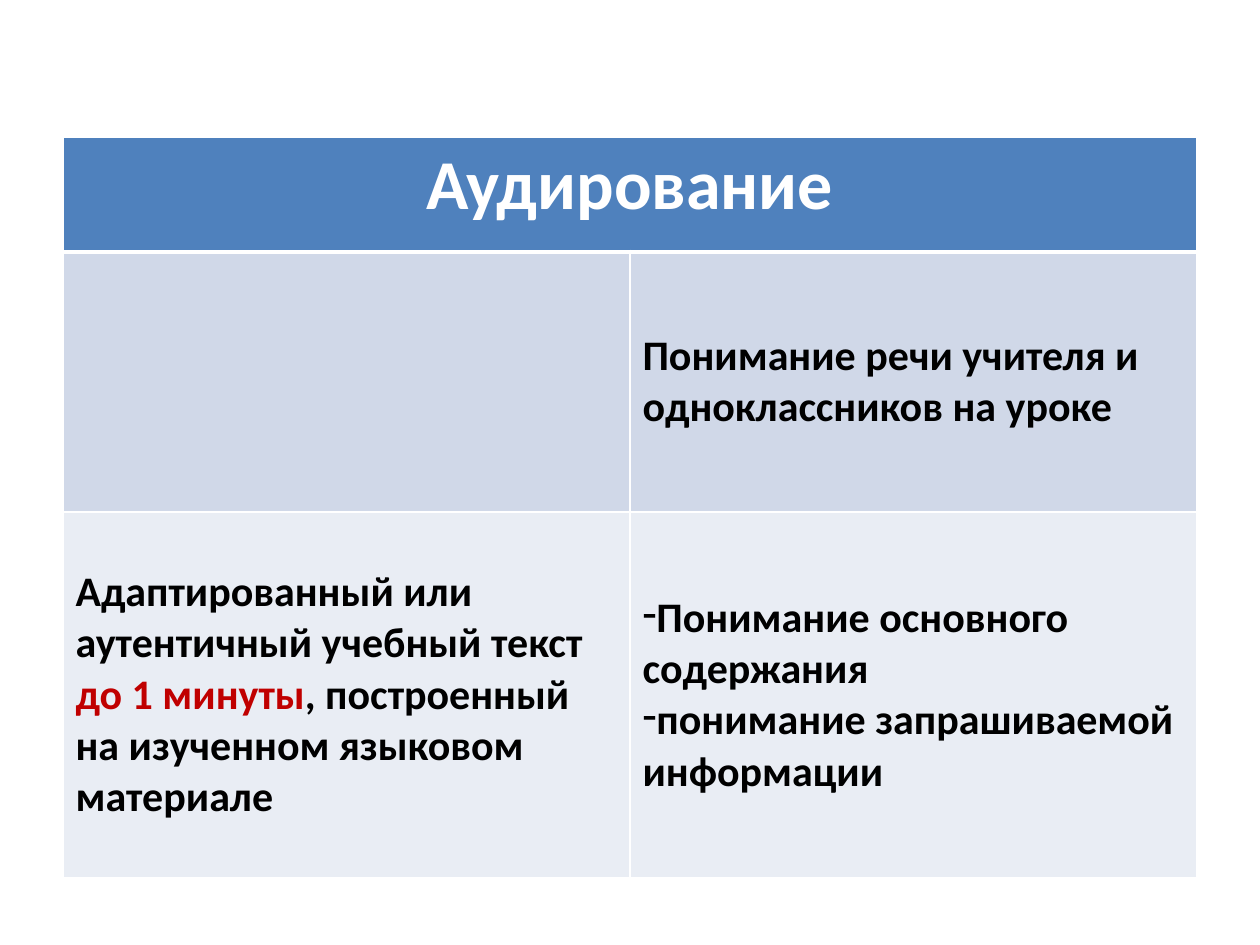
from lxml import etree
from pptx import Presentation
from pptx.dml.color import RGBColor
from pptx.enum.text import MSO_ANCHOR, PP_ALIGN
from pptx.oxml.ns import qn
from pptx.util import Pt

PX = 914400 // 126
MIDDLE, TOP = MSO_ANCHOR.MIDDLE, MSO_ANCHOR.TOP
CENTER, LEFT = PP_ALIGN.CENTER, PP_ALIGN.LEFT
WHITE = RGBColor(0xFF, 0xFF, 0xFF)
BLACK = RGBColor(0, 0, 0)
RED = RGBColor(0xC0, 0, 0)
BLUE = RGBColor(0x4F, 0x81, 0xBD)
BAND_DARK = RGBColor(0xD0, 0xD8, 0xE8)
BAND_LIGHT = RGBColor(0xE9, 0xED, 0xF4)

ROW_HEIGHTS = [115, 260, 366]
ROW_FILLS = [BLUE, BAND_DARK, BAND_LIGHT]
HEADING = {"size": Pt(40), "bold": True, "name": "Calibri"}
BODY = {"size": Pt(24), "bold": True, "name": "Calibri"}

TITLE = [[("Аудирование", WHITE)]]
CLASSROOM = [[("Понимание речи учителя и одноклассников на уроке", BLACK)]]
TEXT_TYPE = [[
    ("Адаптированный или аутентичный учебный текст ", BLACK),
    ("до 1 минуты", RED),
    (", построенный на изученном языковом материале", BLACK),
]]
SKILLS = [
    [("Понимание основного содержания", BLACK)],
    [("понимание запрашиваемой информации", BLACK)],
]


def style_cell(cell, fill, bottom_width):
    cell.fill.solid()
    cell.fill.fore_color.rgb = fill
    properties = cell._tc.get_or_add_tcPr()
    widths = {"lnL": 1, "lnR": 1, "lnT": 1, "lnB": bottom_width}
    for position, (side, width) in enumerate(widths.items()):
        border = etree.Element(qn(f"a:{side}"), w=str(Pt(width)))
        solid = etree.SubElement(border, qn("a:solidFill"))
        etree.SubElement(solid, qn("a:srgbClr"), val=str(WHITE))
        properties.insert(position, border)


def add_dash(paragraph):
    properties = paragraph._p.get_or_add_pPr()
    properties.set("marL", "0")
    properties.set("indent", "0")
    etree.SubElement(properties, qn("a:buFontTx"))
    etree.SubElement(properties, qn("a:buChar"), char="-")


def write_cell(cell, paragraphs, font, align=LEFT, anchor=MIDDLE, dashed=False):
    cell.vertical_anchor = anchor
    frame = cell.text_frame
    for number, pieces in enumerate(paragraphs):
        paragraph = frame.add_paragraph() if number else frame.paragraphs[0]
        paragraph.alignment = align
        if dashed:
            add_dash(paragraph)
        for text, color in pieces:
            run = paragraph.add_run()
            run.text = text
            run.font.color.rgb = color
            for attribute, value in font.items():
                setattr(run.font, attribute, value)


def add_listening_table(slide, left, top, width):
    box = [length * PX for length in (left, top, width, sum(ROW_HEIGHTS))]
    table = slide.shapes.add_table(len(ROW_HEIGHTS), 2, *box).table
    for column in table.columns:
        column.width = width * PX // 2
    for index, (height, fill) in enumerate(zip(ROW_HEIGHTS, ROW_FILLS)):
        table.rows[index].height = height * PX
        for cell in table.rows[index].cells:
            style_cell(cell, fill, 1 if index else 3)
    table.cell(0, 0).merge(table.cell(0, 1))
    write_cell(table.cell(0, 0), TITLE, HEADING, CENTER, TOP)
    write_cell(table.cell(1, 1), CLASSROOM, BODY)
    write_cell(table.cell(2, 0), TEXT_TYPE, BODY)
    write_cell(table.cell(2, 1), SKILLS, BODY, dashed=True)


def main():
    presentation = Presentation()
    presentation.slide_width = 1260 * PX
    presentation.slide_height = 945 * PX
    slide = presentation.slides.add_slide(presentation.slide_layouts[6])
    add_listening_table(slide, 63, 137, 1134)
    presentation.save("out.pptx")


if __name__ == "__main__":
    main()
